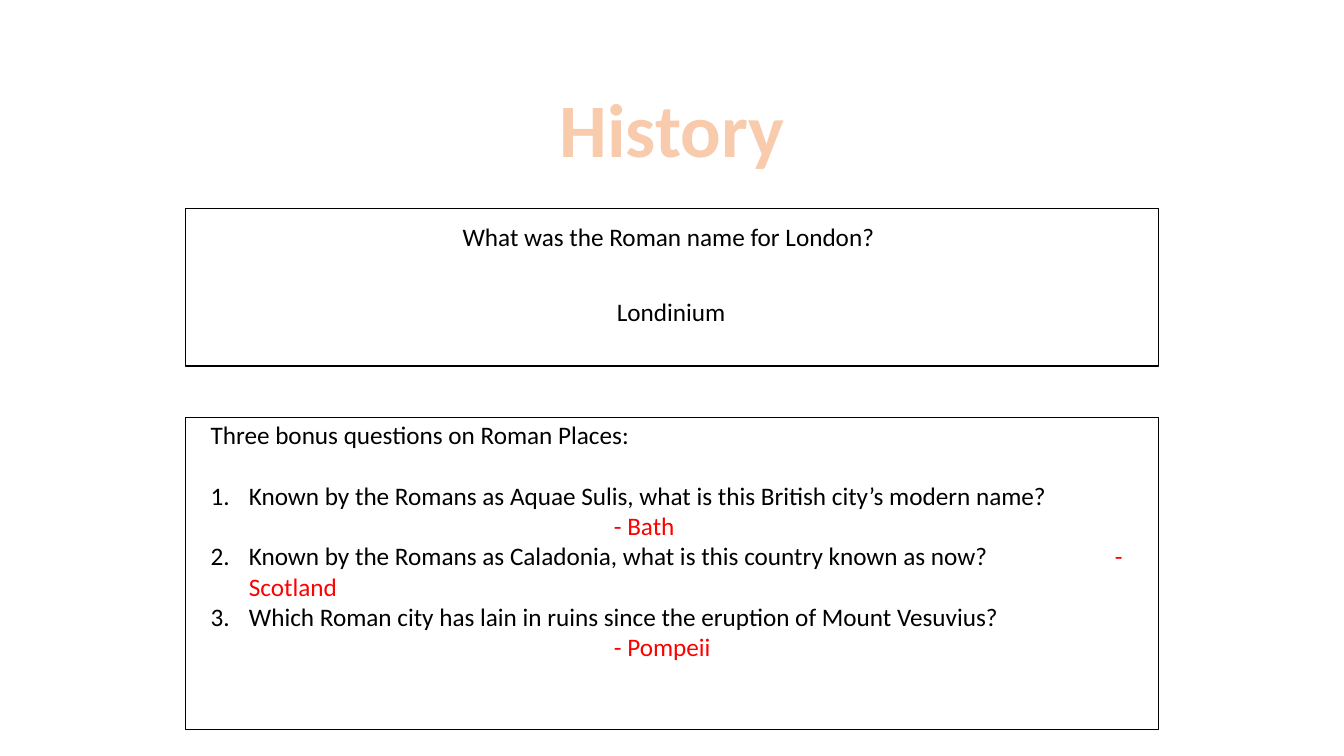
import pptx
import pptx.util
import pptx.dml.color
import pptx.enum.shapes
import pptx.enum.text
import pptx.oxml.ns
from lxml import etree

Inches, Pt = pptx.util.Inches, pptx.util.Pt
ALIGN = pptx.enum.text.PP_ALIGN
COLORS = {"title": "F8CBAD", "edge": "ED7D31", "text": "000000", "answer": "FF0000"}
FONT = "Calibri"

TITLE = "History"
STARTER = [
    ("What was the Roman name for London?", 4.49, 2.15, 4.34),
    ("Londinium", 6.02, 2.89, 1.29),
]
INTRO = "Three bonus questions on Roman Places:"
BONUS = [
    ("Known by the Romans as Aquae Sulis, what is this British city’s modern name?", "- Bath", False),
    ("Known by the Romans as Caladonia, what is this country known as now?", "- Scotland", True),
    ("Which Roman city has lain in ruins since the eruption of Mount Vesuvius?", "- Pompeii", False),
]
FRAMES = [(2.07, 1.56), (4.14, 3.1)]


def color(name):
    return pptx.dml.color.RGBColor.from_string(COLORS[name])


def style(run, size=18, name="text"):
    run.font.name = FONT
    run.font.size = Pt(size)
    run.font.color.rgb = color(name)


def add(parent, tag, **attrs):
    node = etree.SubElement(parent, pptx.oxml.ns.qn(tag))
    for key, value in attrs.items():
        node.set(key, str(value))
    return node


def indent(para, left, hang=0):
    props = para._p.get_or_add_pPr()
    props.set("marL", str(Inches(left)))
    props.set("indent", str(-Inches(hang)))
    return props


def write(para, text, name="text"):
    run = para.add_run()
    run.text = text
    style(run, name=name)


def add_title(slide):
    title = slide.shapes.title
    title.left, title.top = Inches(5.44), Inches(0.76)
    title.width, title.height = Inches(2.45), Inches(1.01)
    frame = title.text_frame
    frame.text = TITLE
    frame.word_wrap = False
    frame.vertical_anchor = pptx.enum.text.MSO_ANCHOR.TOP
    para = frame.paragraphs[0]
    para.alignment = ALIGN.CENTER
    para.line_spacing = 1.0
    run = para.runs[0]
    style(run, 54, "title")
    run.font.bold = True
    line = add(run.font._element, "a:ln", w=Pt(1.75))
    run.font._element.insert(0, line)
    add(add(line, "a:solidFill"), "a:srgbClr", val=COLORS["edge"])


def add_starter(slide):
    for text, left, top, width in STARTER:
        box = slide.shapes.add_textbox(Inches(left), Inches(top), Inches(width), Inches(0.4))
        box.text_frame.word_wrap = False
        write(box.text_frame.paragraphs[0], text)


def add_bonus(slide):
    box = slide.shapes.add_textbox(Inches(1.99), Inches(4.11), Inches(9.55), Inches(2.52))
    frame = box.text_frame
    frame.word_wrap = True
    intro = frame.paragraphs[0]
    write(intro, INTRO)
    intro.space_after = Pt(22)
    for number, (question, answer, inline) in enumerate(BONUS, 1):
        para = frame.add_paragraph()
        props = indent(para, 0.38, 0.38)
        add(props, "a:buFont", typeface="+mj-lt")
        add(props, "a:buAutoNum", type="arabicPeriod", startAt=number)
        write(para, question)
        if inline:
            add(add(props, "a:tabLst"), "a:tab", pos=Inches(8.97), algn="l")
            write(para, "\t" + answer, "answer")
        else:
            para = frame.add_paragraph()
            indent(para, 4)
            write(para, answer, "answer")


def add_frames(slide):
    for top, height in FRAMES:
        frame = slide.shapes.add_shape(
            pptx.enum.shapes.MSO_SHAPE.RECTANGLE,
            Inches(1.84), Inches(top), Inches(9.65), Inches(height))
        frame.shadow.inherit = False
        frame.fill.background()
        frame.line.color.rgb = color("text")
        frame.line.width = Pt(1)


def main():
    deck = pptx.Presentation()
    deck.slide_width, deck.slide_height = Inches(13.33), Inches(7.5)
    slide = deck.slides.add_slide(deck.slide_layouts[5])
    add_title(slide)
    add_starter(slide)
    add_bonus(slide)
    add_frames(slide)
    deck.save("out.pptx")


if __name__ == "__main__":
    main()
